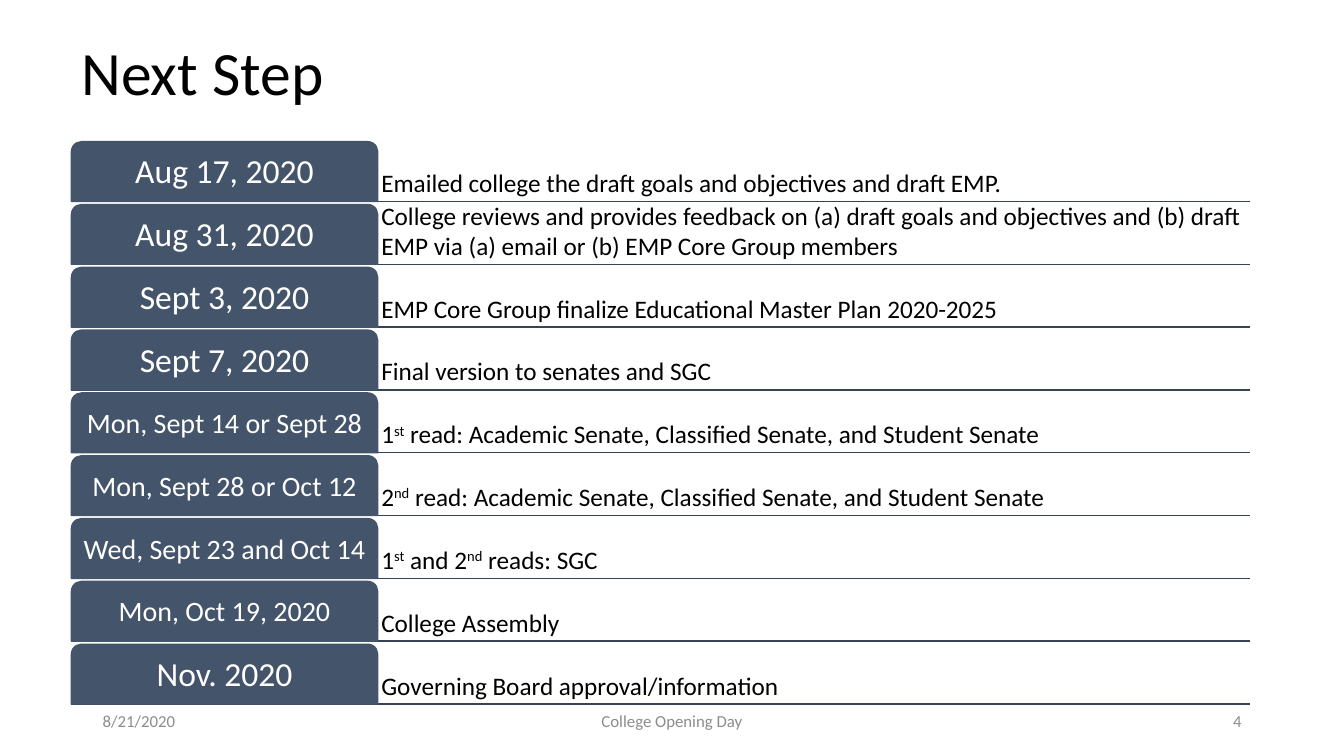
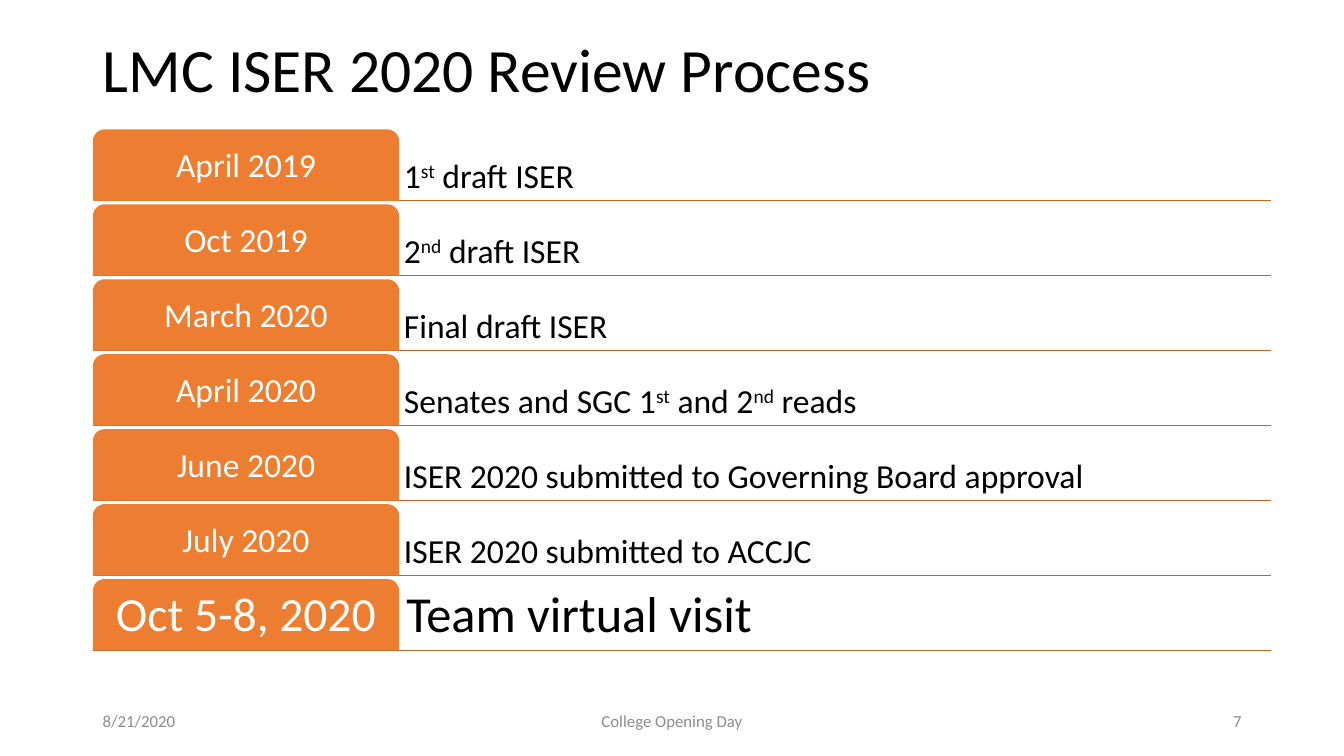
from dataclasses import dataclass

from lxml import etree
from pptx import Presentation
from pptx.dml.color import RGBColor
from pptx.enum import shapes, text
from pptx.oxml.ns import qn
from pptx.util import Cm, Pt


@dataclass(frozen=True)
class Theme:
    font: str = "Calibri"
    ink: str = "000000"
    light: str = "FFFFFF"
    muted: str = "8C8C8C"
    title_size: int = 44
    large_size: int = 24
    label_size: int = 20
    detail_size: int = 18
    footer_size: int = 12
    rule_width: int = 1


@dataclass(frozen=True)
class Box:
    left: float
    top: float
    width: float
    height: float

    def lengths(self):
        return Cm(self.left), Cm(self.top), Cm(self.width), Cm(self.height)


@dataclass(frozen=True)
class Accent:
    label: str
    rule: str
    outlined: bool


@dataclass(frozen=True)
class Step:
    label: str
    detail: str
    label_size: int = Theme.large_size
    detail_size: int = Theme.large_size
    line_spacing: float = 0.9


THEME = Theme()
SLATE = Accent("44546A", "364355", True)
ORANGE = Accent("ED7D31", "BE6427", False)
LABEL_SHARE = 0.26
ROW_GAP = 0.05
FOOTER_TOP, FOOTER_HEIGHT = 17.65, 1.02

PLAN_STEPS = [
    Step("Aug 17, 2020", "Emailed college the draft goals and objectives and draft EMP.",
         detail_size=THEME.detail_size),
    Step("Aug 31, 2020",
         "College reviews and provides feedback on (a) draft goals and objectives "
         "and (b) draft EMP via (a) email or (b) EMP Core Group members",
         detail_size=THEME.detail_size, line_spacing=1.0),
    Step("Sept 3, 2020", "EMP Core Group finalize Educational Master Plan 2020-2025",
         detail_size=THEME.detail_size),
    Step("Sept 7, 2020", "Final version to senates and SGC",
         detail_size=THEME.detail_size),
    Step("Mon, Sept 14 or Sept 28",
         "1^st^ read: Academic Senate, Classified Senate, and Student Senate",
         THEME.label_size, THEME.detail_size),
    Step("Mon, Sept 28 or Oct 12",
         "2^nd^ read: Academic Senate, Classified Senate, and Student Senate",
         THEME.label_size, THEME.detail_size),
    Step("Wed, Sept 23 and Oct 14", "1^st^ and 2^nd^ reads: SGC",
         THEME.label_size, THEME.detail_size),
    Step("Mon, Oct 19, 2020", "College Assembly", THEME.label_size, THEME.detail_size),
    Step("Nov. 2020", "Governing Board approval/information",
         detail_size=THEME.detail_size),
]

REVIEW_STEPS = [
    Step("April 2019", "1^st^ draft ISER"),
    Step("Oct 2019", "2^nd^ draft ISER"),
    Step("March 2020", "Final draft ISER"),
    Step("April 2020", "Senates and SGC 1^st^ and 2^nd^ reads"),
    Step("June 2020", "ISER 2020 submitted to Governing Board approval"),
    Step("July 2020", "ISER 2020 submitted to ACCJC"),
    Step("Oct 5-8, 2020", "Team virtual visit", 34, 36),
]


def color(code):
    return RGBColor.from_string(code)


def style_text(frame, size, ink, align, anchor, spacing=1.0):
    frame.word_wrap = True
    frame.auto_size = text.MSO_AUTO_SIZE.NONE
    frame.vertical_anchor = anchor
    for para in frame.paragraphs:
        para.alignment = align
        para.line_spacing = spacing
        for span in para.runs:
            span.font.name = THEME.font
            span.font.size = Pt(size)
            span.font.color.rgb = color(ink)


def set_insets(frame, size):
    inset = Cm(size * 0.005)
    frame.margin_left = frame.margin_right = inset
    frame.margin_top = frame.margin_bottom = inset


def write_ordinals(para, wording):
    for index, part in enumerate(wording.split("^")):
        span = para.add_run()
        span.text = part
        if index % 2:
            span._r.get_or_add_rPr().set("baseline", "30000")


def add_title(page, box, wording):
    title = page.shapes.title
    title.left, title.top, title.width, title.height = box.lengths()
    title.text_frame.text = wording
    style_text(title.text_frame, THEME.title_size, THEME.ink,
               text.PP_ALIGN.LEFT, text.MSO_ANCHOR.MIDDLE, 0.9)


def add_footer(page, number):
    parts = [
        (2.34, 7.62, "8/21/2020", text.PP_ALIGN.LEFT),
        (11.22, 11.43, "College Opening Day", text.PP_ALIGN.CENTER),
        (23.92, 7.62, str(number), text.PP_ALIGN.RIGHT),
    ]
    for left, width, wording, align in parts:
        box = Box(left, FOOTER_TOP, width, FOOTER_HEIGHT)
        frame = page.shapes.add_textbox(*box.lengths()).text_frame
        frame.text = wording
        style_text(frame, THEME.footer_size, THEME.muted, align, text.MSO_ANCHOR.MIDDLE)


def add_rule(page, box, accent):
    bottom = Cm(box.top + box.height)
    rule = page.shapes.add_connector(shapes.MSO_CONNECTOR.STRAIGHT, Cm(box.left), bottom,
                                     Cm(box.left + box.width), bottom)
    rule.line.color.rgb = color(accent.rule)
    rule.line.width = Pt(THEME.rule_width)
    etree.SubElement(rule._element.spPr, qn("a:effectLst"))


def add_label(page, box, step, accent):
    label = page.shapes.add_shape(shapes.MSO_SHAPE.ROUND_2_SAME_RECTANGLE, *box.lengths())
    label.shadow.inherit = False
    label.fill.solid()
    label.fill.fore_color.rgb = color(accent.label)
    if accent.outlined:
        label.line.color.rgb = color(accent.label)
        label.line.width = Pt(THEME.rule_width)
    else:
        label.line.fill.background()
    label.text_frame.text = step.label
    set_insets(label.text_frame, step.label_size)
    style_text(label.text_frame, step.label_size, THEME.light,
               text.PP_ALIGN.CENTER, text.MSO_ANCHOR.MIDDLE, 0.9)


def add_detail(page, box, step):
    frame = page.shapes.add_textbox(*box.lengths()).text_frame
    write_ordinals(frame.paragraphs[0], step.detail)
    set_insets(frame, step.detail_size)
    style_text(frame, step.detail_size, THEME.ink,
               text.PP_ALIGN.LEFT, text.MSO_ANCHOR.BOTTOM, step.line_spacing)


def add_timeline(page, box, steps, accent):
    height = box.height / (len(steps) + ROW_GAP * (len(steps) - 1))
    pitch = height * (1 + ROW_GAP)
    label_width = box.width * LABEL_SHARE
    rows = [Box(box.left, box.top + index * pitch, box.width, height)
            for index in range(len(steps))]
    for row in rows:
        add_rule(page, row, accent)
    for row, step in zip(rows, steps):
        add_detail(page, Box(row.left + label_width, row.top,
                             row.width - label_width, height), step)
        add_label(page, Box(row.left, row.top, label_width, height), step, accent)


def add_timeline_slide(deck, title, title_box, number, timeline_box, steps, accent):
    page = deck.slides.add_slide(deck.slide_layouts.get_by_name("Title Only"))
    add_title(page, title_box, title)
    add_timeline(page, timeline_box, steps, accent)
    add_footer(page, number)


def main():
    deck = Presentation()
    deck.slide_width, deck.slide_height = Cm(33.87), Cm(19.05)
    add_timeline_slide(deck, "Next Step", Box(1.8, 0.69, 29.21, 2.41), 4,
                       Box(1.8, 3.57, 29.69, 14.17), PLAN_STEPS, SLATE)
    add_timeline_slide(deck, "LMC ISER 2020 Review Process", Box(2.34, 0, 29.21, 3.68), 7,
                       Box(2.34, 3.26, 29.69, 13.13), REVIEW_STEPS, ORANGE)
    deck.save("out.pptx")


if __name__ == "__main__":
    main()
